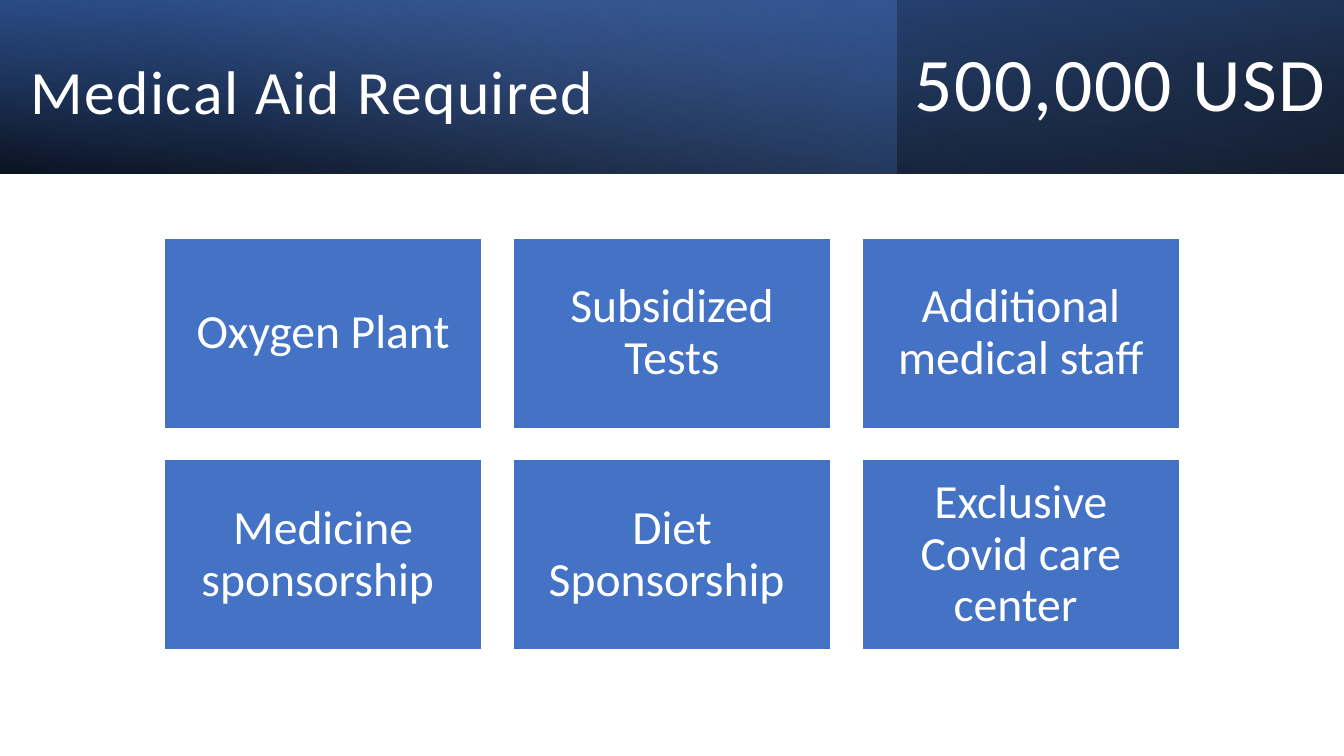
import pptx
import pptx.dml.color
import pptx.enum.shapes
import pptx.enum.text
import pptx.oxml
import pptx.oxml.ns
import pptx.util

Inches = pptx.util.Inches
Points = pptx.util.Pt
Align = pptx.enum.text.PP_ALIGN
WHITE, BLUE = "FFFFFF", "4472C4"


def color(hex_code):
    return pptx.dml.color.RGBColor.from_string(hex_code)


def gradient_fill(stops, angle):
    """Stops are (position %, hex colour, opacity %); the angle runs clockwise."""
    stop_xml = "".join(
        f'<a:gs pos="{position * 1000}"><a:srgbClr val="{code}">'
        f'<a:alpha val="{opacity * 1000}"/></a:srgbClr></a:gs>'
        for position, code, opacity in stops)
    return pptx.oxml.parse_xml(
        f'<a:gradFill {pptx.oxml.ns.nsdecls("a")} rotWithShape="1">'
        f'<a:gsLst>{stop_xml}</a:gsLst>'
        f'<a:lin ang="{angle * 60000}" scaled="0"/></a:gradFill>')


class SlideBuilder:
    font = "Calibri"
    line_spacing = 0.9

    def __init__(self, page):
        self.page = page

    def rectangle(self, left, top, width, height):
        box = self.page.shapes.add_shape(
            pptx.enum.shapes.MSO_SHAPE.RECTANGLE,
            Inches(left), Inches(top), Inches(width), Inches(height))
        box.shadow.inherit = False
        return box

    def gradient_band(self, width, height, stops, angle, rotation=0, flip=False):
        band = self.rectangle(0, 0, width, height)
        band.line.fill.background()
        band.rotation = rotation
        properties = band._element.spPr
        if flip:
            properties.xfrm.set("flipH", "1")
        geometry = properties.find(pptx.oxml.ns.qn("a:prstGeom"))
        geometry.addnext(gradient_fill(stops, angle))

    def set_text(self, box, text, size, align, tracking=0):
        frame = box.text_frame
        frame.word_wrap = True
        frame.vertical_anchor = pptx.enum.text.MSO_ANCHOR.MIDDLE
        para = frame.paragraphs[0]
        para.alignment = align
        para.line_spacing = self.line_spacing
        para.font.name = self.font
        para.font.size = Points(size)
        para.font.color.rgb = color(WHITE)
        span = para.add_run()
        span.text = text
        if tracking:
            span.font._element.set("spc", str(round(tracking * 100)))

    def heading(self, text, left, top, width, height, size, align=Align.LEFT):
        box = self.page.shapes.add_textbox(
            Inches(left), Inches(top), Inches(width), Inches(height))
        self.set_text(box, text, size, align, tracking=1.1)

    def tile(self, text, left, top, width, height):
        box = self.rectangle(left, top, width, height)
        box.fill.solid()
        box.fill.fore_color.rgb = color(BLUE)
        box.line.color.rgb = color(WHITE)
        box.line.width = Points(1)
        frame = box.text_frame
        frame.margin_left = frame.margin_right = Inches(0.14)
        frame.margin_top = frame.margin_bottom = Inches(0.14)
        self.set_text(box, text, 34, Align.CENTER)


def main():
    deck = pptx.Presentation()
    deck.slide_width, deck.slide_height = Inches(13.33), Inches(7.5)
    builder = SlideBuilder(deck.slides.add_slide(deck.slide_layouts[6]))

    page_width, title_width, band_height = 13.33, 8.89, 1.72
    builder.gradient_band(page_width, band_height,
                          [(0, "000000", 96), (100, "2F5597", 100)], 100,
                          rotation=180, flip=True)
    builder.gradient_band(title_width, band_height,
                          [(0, BLUE, 41), (74, "8FAADC", 0)], 140)
    builder.gradient_band(page_width, band_height,
                          [(0, "000000", 63), (78, BLUE, 15)], 260, flip=True)

    builder.heading("Medical Aid Required", 0.2, 0.3, 7.72, 1.27, 44)
    builder.heading("500,000 USD", title_width, 0, page_width - title_width,
                    band_height, 54, Align.CENTER)

    needs = ["Oxygen Plant", "Subsidized Tests", "Additional medical staff",
             "Medicine sponsorship ", "Diet Sponsorship ",
             "Exclusive Covid care center "]
    columns, tile_width, tile_height, gap = 3, 3.15, 1.89, 0.31
    for index, need in enumerate(needs):
        row, column = divmod(index, columns)
        builder.tile(need, 1.63 + column * (tile_width + gap),
                     2.36 + row * (tile_height + gap), tile_width, tile_height)

    deck.save("out.pptx")


if __name__ == "__main__":
    main()
